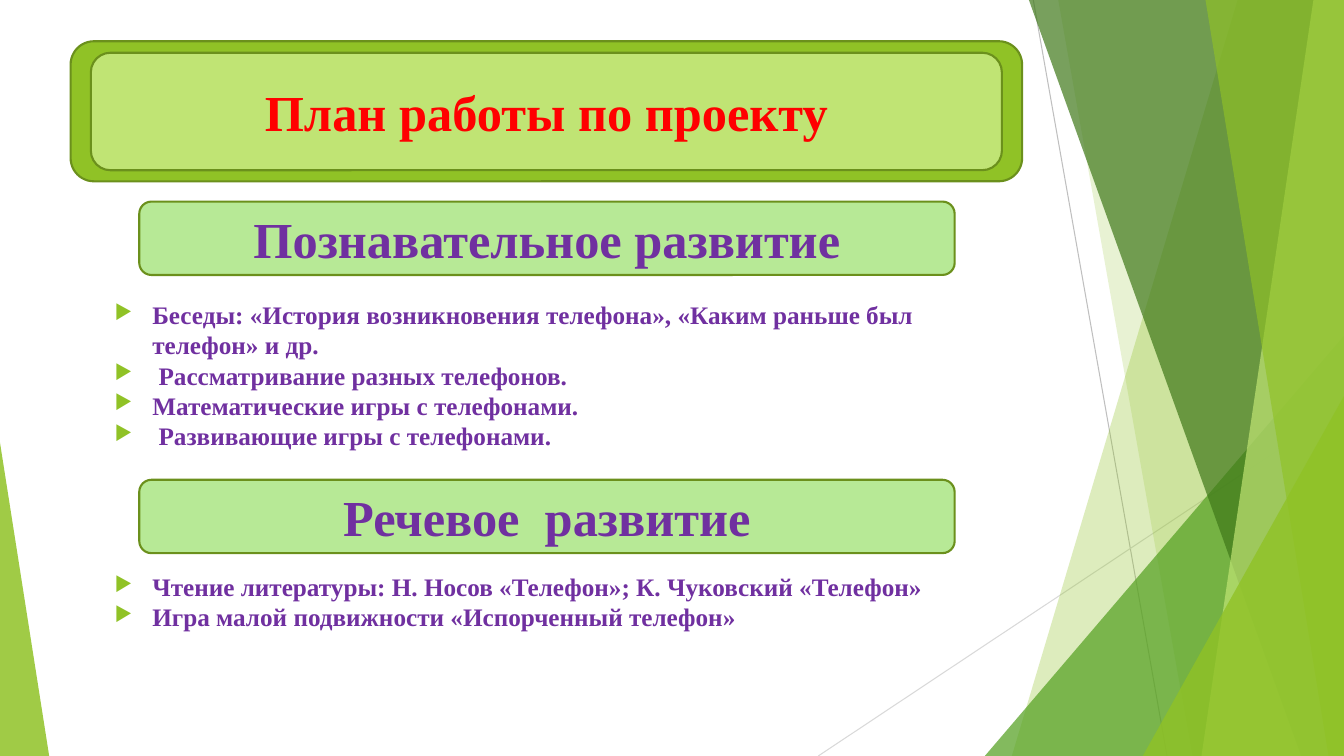
from lxml.etree import SubElement
from pptx import Presentation
from pptx.dml.color import RGBColor
from pptx.enum.shapes import MSO_CONNECTOR, MSO_SHAPE
from pptx.enum.text import MSO_ANCHOR, PP_ALIGN
from pptx.oxml.ns import qn
from pptx.util import Cm, Pt

WIDTH, HEIGHT = 33.87, 19.05
FONT = "Times New Roman"
COLORS = {
    "lime": "90C226", "pale_lime": "C0E474", "mint": "B7E996",
    "leaf": "54A021", "forest": "3F7819", "outline": "6B901C",
    "red": "FF0000", "purple": "7030A0",
    "gray": "BFBFBF", "light_gray": "D9D9D9",
}
COGNITIVE = [
    "Беседы: «История возникновения телефона», «Каким раньше был телефон» и др.",
    " Рассматривание разных телефонов.",
    "Математические игры с телефонами.",
    " Развивающие игры с телефонами.",
]
SPEECH = [
    "Чтение литературы: Н. Носов «Телефон»; К. Чуковский «Телефон»",
    "Игра малой подвижности «Испорченный телефон»",
]


def rgb(name):
    return RGBColor.from_string(COLORS[name])


def paint(shape, color, opacity=100, outline=None):
    shape.shadow.inherit = False
    shape.fill.solid()
    shape.fill.fore_color.rgb = rgb(color)
    if opacity < 100:
        tint = shape.fill._xPr.find(qn("a:solidFill"))[0]
        SubElement(tint, qn("a:alpha"), val=str(opacity * 1000))
    if outline:
        shape.line.color.rgb = rgb(outline)
        shape.line.width = Pt(1.5)
    else:
        shape.line.fill.background()


def write(paragraph, text, size=18, color="purple", align=PP_ALIGN.LEFT):
    paragraph.alignment = align
    run = paragraph.add_run()
    run.text = text
    run.font.name = FONT
    run.font.size = Pt(size)
    run.font.bold = True
    run.font.color.rgb = rgb(color)


def add_bullet(paragraph):
    props = paragraph._p.get_or_add_pPr()
    props.set("marL", str(Cm(0.95)))
    props.set("indent", str(-Cm(0.95)))
    bullet_color = SubElement(props, qn("a:buClr"))
    SubElement(bullet_color, qn("a:srgbClr"), val=COLORS["lime"])
    SubElement(props, qn("a:buSzPct"), val="80000")
    SubElement(props, qn("a:buChar"), char="▶")


def add_ray(slide, start, end, color):
    ray = slide.shapes.add_connector(
        MSO_CONNECTOR.STRAIGHT, *(Cm(value) for value in (*start, *end)))
    ray.line.color.rgb = rgb(color)
    ray.line.width = Pt(0.75)
    SubElement(ray._element.spPr, qn("a:effectLst"))


def add_corner(slide, box, apex, color, opacity):
    corner = slide.shapes.add_shape(
        MSO_SHAPE.ISOSCELES_TRIANGLE, *(Cm(value) for value in box))
    corner.adjustments[0] = apex
    paint(corner, color, opacity)


def add_facets(slide, left, top, width, height):
    """Translucent blades that share the right edge of the box."""
    right, bottom = left + width, top + height

    def blade(top_x, bottom_x, color, opacity):
        builder = slide.shapes.build_freeform(Cm(left + top_x), Cm(top), scale=1.0)
        builder.add_line_segments([
            (Cm(right), Cm(top)), (Cm(right), Cm(bottom)),
            (Cm(left + bottom_x), Cm(bottom))], close=True)
        paint(builder.convert_to_shape(), color, opacity)

    def wedge(x, y, color, opacity):
        add_corner(slide, (left + x, top + y, width - x, height - y), 1, color, opacity)

    add_ray(slide, (left + 5.42, top), (left + 8.79, bottom), "gray")
    add_ray(slide, (right, top + 10.24), (left, bottom), "light_gray")
    blade(10.57, 4.88, "lime", 30)
    blade(6.05, 9.43, "lime", 20)
    wedge(4.2, 8.46, "leaf", 72)
    blade(5.31, 12.17, "forest", 70)
    blade(12.48, 9.66, "pale_lime", 70)
    blade(9.76, 12.86, "lime", 65)
    wedge(8.18, 9.98, "lime", 80)


def add_plate(slide, left, top, width, height, fill, text="", color="purple"):
    plate = slide.shapes.add_shape(
        MSO_SHAPE.ROUNDED_RECTANGLE, Cm(left), Cm(top), Cm(width), Cm(height))
    paint(plate, fill, outline="outline")
    if text:
        plate.text_frame.vertical_anchor = MSO_ANCHOR.MIDDLE
        plate.text_frame.word_wrap = True
        write(plate.text_frame.paragraphs[0], text, size=36, color=color,
              align=PP_ALIGN.CENTER)


def add_title(slide, left, top, width, height):
    add_plate(slide, left, top, width, height, "lime")
    add_plate(slide, left + 0.51, top + 0.29, width - 1.02, height - 0.57,
              "pale_lime", "План работы по проекту", "red")


def add_section(slide, left, top, width, heading, items, gap):
    """Heading plate with its bulleted list, gap below the plate."""
    plate_height = 1.85
    add_plate(slide, left + 0.87, top, 20.55, plate_height, "mint", heading)
    activities = slide.shapes.add_textbox(
        Cm(left), Cm(top + plate_height + gap), Cm(width),
        Cm(0.76 * len(items) + 0.3)).text_frame
    activities.word_wrap = True
    for index, item in enumerate(items):
        paragraph = activities.add_paragraph() if index else activities.paragraphs[0]
        paragraph.line_spacing = Pt(21.6)
        add_bullet(paragraph)
        write(paragraph, item)


def main():
    deck = Presentation()
    deck.slide_width, deck.slide_height = Cm(WIDTH), Cm(HEIGHT)
    slide = deck.slides.add_slide(deck.slide_layouts[6])

    # Background facets
    add_facets(slide, 20.62, 0, WIDTH - 20.62, HEIGHT)
    add_corner(slide, (0, 11.15, 1.24, HEIGHT - 11.15), 0, "lime", 85)

    # Title and sections
    add_title(slide, 1.78, 1.04, 23.98, 3.53)
    add_section(slide, 2.64, 5.08, 23.11, "Познавательное развитие", COGNITIVE, 0.49)
    add_section(slide, 2.64, 12.09, 23.11, "Речевое  развитие", SPEECH, 0.33)

    deck.save("out.pptx")


if __name__ == "__main__":
    main()
